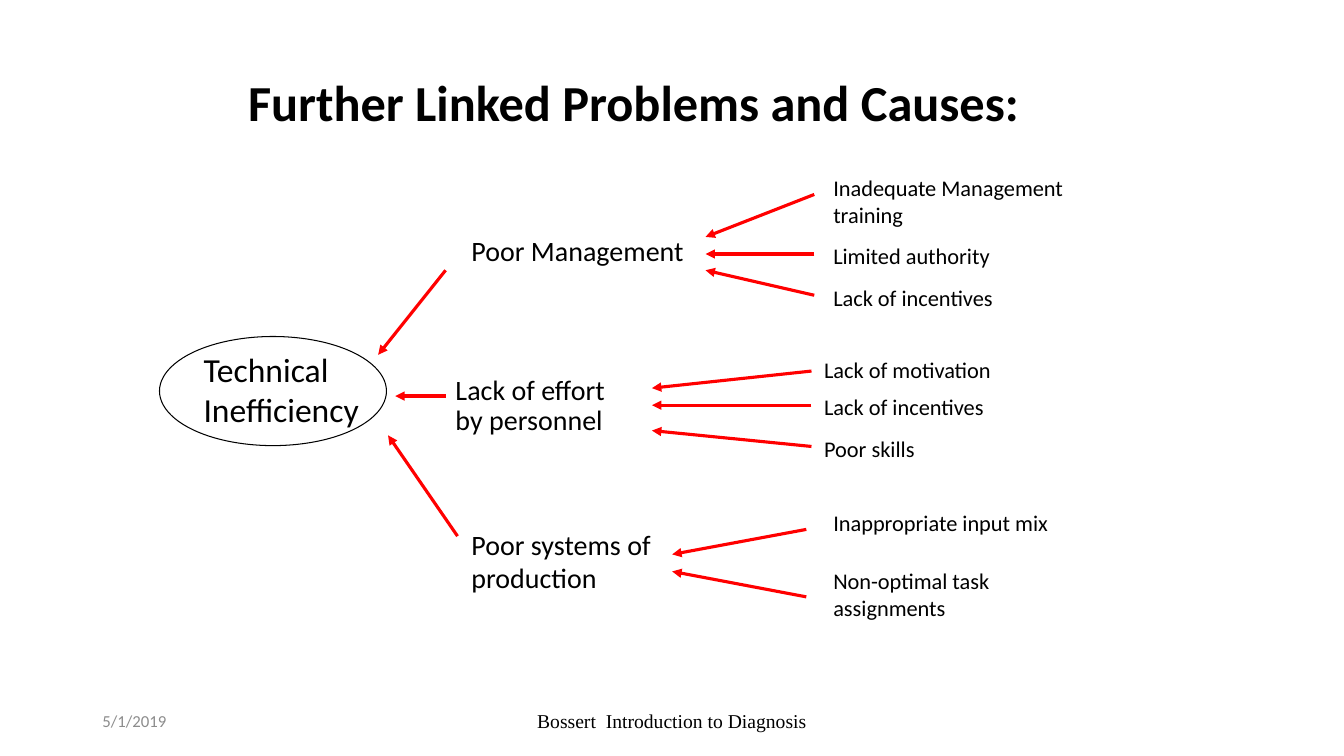
import pptx
import pptx.util
import pptx.dml.color
import pptx.enum.shapes
import pptx.enum.text
import pptx.oxml
import pptx.oxml.ns

Cm, Pt = pptx.util.Cm, pptx.util.Pt
Align = pptx.enum.text.PP_ALIGN
Anchor = pptx.enum.text.MSO_ANCHOR
HUES = {name: pptx.dml.color.RGBColor.from_string(code) for name, code in
        {"ink": "000000", "arrow": "FF0000", "date": "8C8C8C"}.items()}

deck = pptx.Presentation()
deck.slide_width, deck.slide_height = Cm(33.87), Cm(19.05)
slide = deck.slides.add_slide(deck.slide_layouts[5])


def style(shape, box, text, size, font="Calibri", hue="ink", align=Align.LEFT,
          anchor=Anchor.TOP, lead=1.0):
    """Place a shape and fill it with one formatted paragraph."""
    shape.left, shape.top, shape.width, shape.height = map(Cm, box)
    frame = shape.text_frame
    frame.text = text
    frame.word_wrap = True
    frame.auto_size = pptx.enum.text.MSO_AUTO_SIZE.NONE
    frame.vertical_anchor = anchor
    para = frame.paragraphs[0]
    para.alignment = align
    para.line_spacing = lead
    run = para.runs[0].font
    run.name, run.size, run.color.rgb = font, Pt(size), HUES[hue]
    return run


def label(*args, **opts):
    style(slide.shapes.add_textbox(0, 0, 0, 0), *args, **opts)


title = style(slide.shapes.title, (5.08, 0.64, 21.79, 4.01),
              "Further Linked Problems and Causes:", 36,
              align=Align.CENTER, anchor=Anchor.MIDDLE, lead=0.9)
title.bold = True

# Central problem
oval = slide.shapes.add_shape(pptx.enum.shapes.MSO_SHAPE.OVAL,
                              Cm(4.02), Cm(8.48), Cm(5.72), Cm(2.75))
oval.shadow.inherit = False
oval.fill.background()
oval.line.color.rgb = HUES["ink"]
oval.line.width = Pt(0.75)
label((4.88, 8.66, 5.28, 2.31), "Technical Inefficiency", 24)

# Linked problems
label((11.63, 5.77, 6.55, 1.09), "Poor Management", 20)
label((11.23, 9.35, 5.08, 2.11), "Lack of effort by personnel", 20, lead=0.9)
label((11.63, 13.16, 5.08, 1.96), "Poor systems of production", 20)

# Causes: left edge, then top, width and text of each
causes = [
    (20.75, [(4.27, 7.42, "Inadequate Management training"),
             (5.97, 7.42, "Limited authority"),
             (7.04, 5.51, "Lack of incentives")]),
    (20.52, [(8.84, 5.28, "Lack of motivation"),
             (9.78, 5.28, "Lack of incentives"),
             (10.85, 5.28, "Poor skills")]),
    (20.75, [(12.7, 6.55, "Inappropriate input mix"),
             (14.17, 6.78, "Non-optimal task assignments")]),
]
for left, items in causes:
    for top, width, text in items:
        label((left, top, width, 0.94), text, 16)

# Arrows from cause to effect: start x, end x, then start and end y
fans = [
    (20.52, 17.78, [(4.9, 5.97), (6.4, 6.4), (7.44, 6.81)]),
    (20.45, 16.43, [(9.35, 9.78), (10.21, 10.21), (11.25, 10.85)]),
    (20.32, 16.94, [(13.34, 13.97), (15.04, 14.4)]),
    (11.23, 9.53, [(6.81, 8.94)]),
    (11.23, 9.96, [(9.98, 9.98)]),
    (11.53, 9.78, [(13.51, 10.97)]),
]
for tail, head, rows in fans:
    for start, end in rows:
        arrow = slide.shapes.add_connector(
            pptx.enum.shapes.MSO_CONNECTOR.STRAIGHT,
            Cm(tail), Cm(start), Cm(head), Cm(end))
        arrow.line.color.rgb = HUES["arrow"]
        arrow.line.width = Pt(2.25)
        tip = pptx.oxml.parse_xml(
            f'<a:tailEnd {pptx.oxml.ns.nsdecls("a")} type="triangle"/>')
        arrow.line._get_or_add_ln().append(tip)
        flat = pptx.oxml.parse_xml(
            f'<a:effectLst {pptx.oxml.ns.nsdecls("a")}/>')
        arrow._element.spPr.append(flat)

# Footer
label((2.33, 17.66, 7.62, 1.01), "5/1/2019", 12, hue="date",
      anchor=Anchor.MIDDLE)
label((11.22, 17.66, 11.43, 1.01), "Bossert  Introduction to Diagnosis", 14,
      font="Times New Roman", align=Align.CENTER, anchor=Anchor.MIDDLE)

deck.save("out.pptx")
